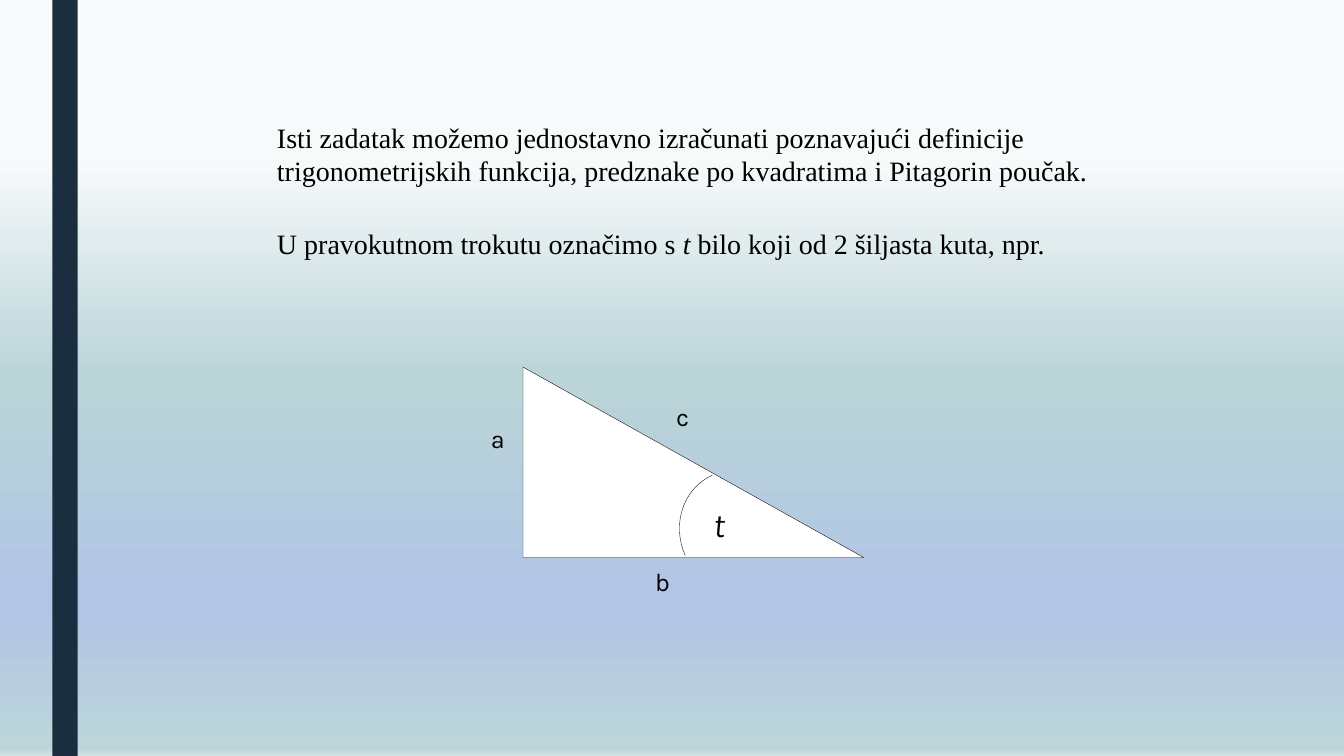
from dataclasses import dataclass

from lxml.etree import SubElement
from pptx import Presentation
from pptx.dml.color import RGBColor
from pptx.enum.shapes import MSO_SHAPE as Shape
from pptx.enum.text import MSO_AUTO_SIZE as AutoSize
from pptx.oxml.ns import qn
from pptx.shapes.shapetree import GroupShapes
from pptx.slide import Slide
from pptx.util import Cm, Pt

COLORS = {
    "bar": "1A2E40",
    "ink": "000000",
    "paper": "FFFFFF",
}
SKY = [(21, "F7FAFB"), (50, "BAD4D8"), (80, "B2C5E6"), (99, "BCD5D9"), (100, "D2E3E6")]
SERIF, SANS = "Times New Roman", "Karla"
Box = tuple[float, float, float, float]


@dataclass
class Figure:
    kind: Shape
    box: Box
    fill: str = ""
    line: str = ""
    rotation: float = 0


@dataclass
class Label:
    """Text box; a run between asterisks is set in italics."""
    text: str
    box: Box
    font: str = SANS
    size: float = 18
    wrap: bool = True
    line: str = ""


BAR = Figure(Shape.RECTANGLE, (1.32, 0, 0.64, 19.05), fill="bar")
TRIANGLE = [
    Figure(Shape.RIGHT_TRIANGLE, (13.18, 9.25, 8.59, 4.8), fill="paper", line="ink"),
    Figure(Shape.ARC, (17.02, 11.96, 3.15, 2.9), line="ink", rotation=246),
]
SIDES = [
    Label("a", (12.12, 10.54, 1.07, 1.32)),
    Label("c", (16.79, 9.98, 0.76, 1.32)),
    Label("b", (16.26, 14.15, 1.09, 1.32), wrap=False),
]
TEXTS = [
    Label("Isti zadatak možemo jednostavno izračunati poznavajući definicije "
          "trigonometrijskih funkcija, predznake po kvadratima i Pitagorin poučak.",
          (6.73, 2.9, 21.21, 1.96), SERIF, 20),
    Label("U pravokutnom trokutu označimo s *t* bilo koji od 2 šiljasta kuta, npr.",
          (6.73, 5.59, 20.17, 1.12), SERIF, 20),
]
ANGLE = Label("*t*", (17.73, 12.57, 0.86, 1.27), size=24, line="paper")


def rgb(name: str) -> RGBColor:
    return RGBColor.from_string(COLORS[name])


def set_line(s, name: str) -> None:
    if name:
        s.line.color.rgb = rgb(name)
        s.line.width = Pt(0.25)
    else:
        s.line.fill.background()


def paint_background(slide: Slide) -> None:
    fill = slide.background.fill
    fill.gradient()
    fill.gradient_angle = 270
    stops = slide.background._cSld.find(".//" + qn("a:gsLst"))
    for stop in list(stops):
        stops.remove(stop)
    for percent, color in SKY:
        stop = SubElement(stops, qn("a:gs"), pos=str(percent * 1000))
        SubElement(stop, qn("a:srgbClr"), val=color)


def draw_figure(shapes: GroupShapes, figure: Figure) -> None:
    s = shapes.add_shape(figure.kind, *map(Cm, figure.box))
    s.shadow.inherit = False
    s.rotation = figure.rotation
    if figure.fill:
        s.fill.solid()
        s.fill.fore_color.rgb = rgb(figure.fill)
    else:
        s.fill.background()
    set_line(s, figure.line)


def write_label(shapes: GroupShapes, label: Label) -> None:
    s = shapes.add_textbox(*map(Cm, label.box))
    set_line(s, label.line)
    tf = s.text_frame
    tf.auto_size = AutoSize.SHAPE_TO_FIT_TEXT
    tf.word_wrap = label.wrap
    p = tf.paragraphs[0]
    for i, part in enumerate(label.text.split("*")):
        if not part:
            continue
        r = p.add_run()
        r.text = part
        style = {"name": label.font, "size": Pt(label.size), "italic": i % 2 == 1}
        for key, value in style.items():
            setattr(r.font, key, value)
        r.font.color.rgb = rgb("ink")


def main() -> None:
    prs = Presentation()
    prs.slide_width, prs.slide_height = Cm(33.87), Cm(19.05)
    slide = prs.slides.add_slide(prs.slide_layouts[6])
    paint_background(slide)
    draw_figure(slide.shapes, BAR)
    for text in TEXTS:
        write_label(slide.shapes, text)
    group = slide.shapes.add_group_shape()
    for figure in TRIANGLE:
        draw_figure(group.shapes, figure)
    for side in SIDES:
        write_label(group.shapes, side)
    write_label(slide.shapes, ANGLE)
    prs.save("out.pptx")


if __name__ == "__main__":
    main()
